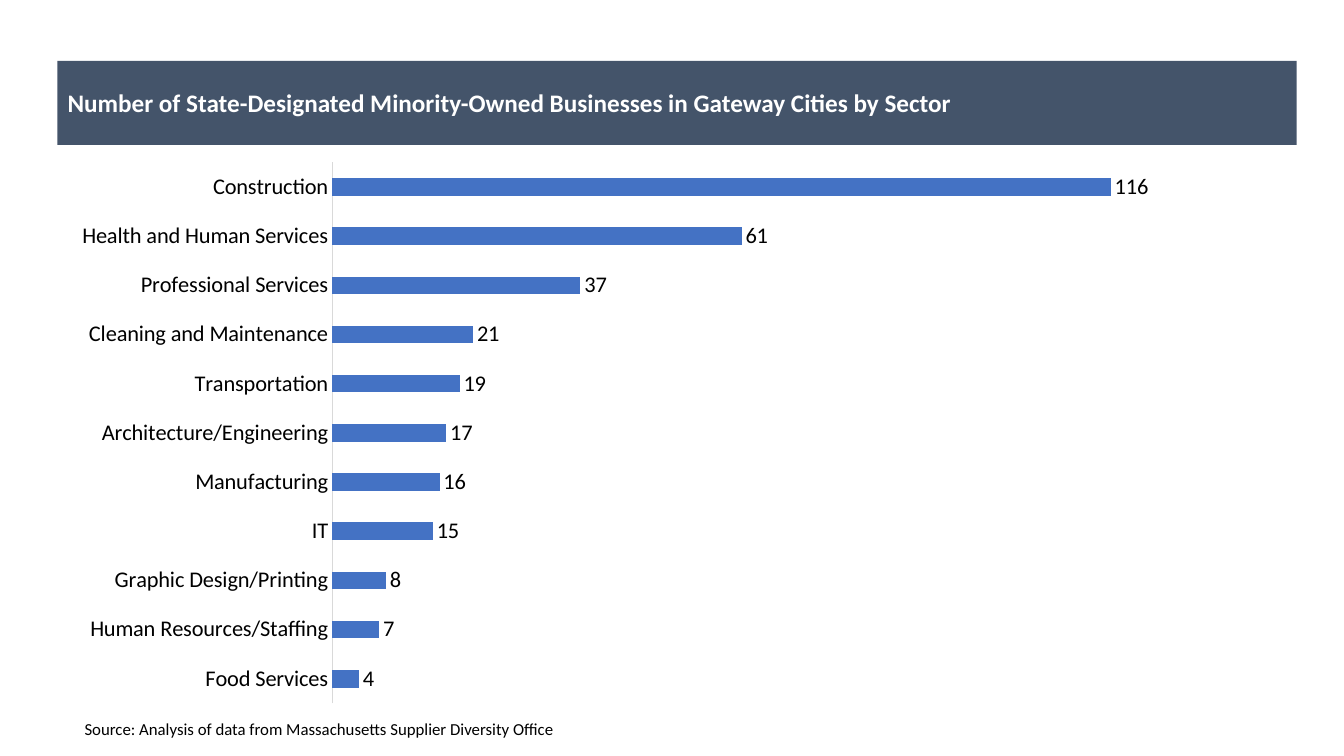
from pptx import Presentation
from pptx import util as u
from pptx.chart.data import CategoryChartData
from pptx.dml.color import RGBColor
from pptx.enum import chart as charts, text

FONT = "Calibri"
COLORS = {"banner": "44546A", "bar": "4472C4", "axis": "D9D9D9",
          "text": "000000", "light": "FFFFFF"}
WIDTH, HEIGHT = 13.33, 7.5
LEFT, BODY_WIDTH = 0.57, 12.29

SECTORS = {
    "Food Services": 4,
    "Human Resources/Staffing": 7,
    "Graphic Design/Printing": 8,
    "IT": 15,
    "Manufacturing": 16,
    "Architecture/Engineering": 17,
    "Transportation": 19,
    "Cleaning and Maintenance": 21,
    "Professional Services": 37,
    "Health and Human Services": 61,
    "Construction": 116,
}


def color(name):
    return RGBColor.from_string(COLORS[name])


def style_font(font, size, name="text", bold=False):
    font.name, font.size, font.bold = FONT, u.Pt(size), bold
    font.color.rgb = color(name)


def inches(box):
    return [u.Inches(length) for length in box]


def add_banner(page, box):
    title = page.shapes.title
    title.left, title.top, title.width, title.height = inches(box)
    title.fill.solid()
    title.fill.fore_color.rgb = color("banner")
    frame = title.text_frame
    frame.text = ("Number of State-Designated Minority-Owned Businesses "
                  "in Gateway Cities by Sector")
    frame.vertical_anchor = text.MSO_ANCHOR.MIDDLE
    frame.auto_size = text.MSO_AUTO_SIZE.SHAPE_TO_FIT_TEXT
    frame.paragraphs[0].alignment = text.PP_ALIGN.LEFT
    style_font(frame.paragraphs[0].runs[0].font, 18, "light", bold=True)


def add_sector_chart(page, box):
    data = CategoryChartData()
    data.categories = list(SECTORS)
    data.add_series("Series 1", list(SECTORS.values()))
    chart = page.shapes.add_chart(
        charts.XL_CHART_TYPE.BAR_CLUSTERED, *inches(box), data).chart
    chart.has_legend = chart.has_title = False
    style_font(chart.font, 10)

    # Axes
    sector_axis, count_axis = chart.category_axis, chart.value_axis
    sector_axis.major_tick_mark = charts.XL_TICK_MARK.NONE
    sector_axis.format.line.color.rgb = color("axis")
    sector_axis.format.line.width = u.Pt(0.75)
    style_font(sector_axis.tick_labels.font, 16)
    count_axis.minimum_scale, count_axis.maximum_scale = 0, 140
    count_axis.has_major_gridlines = False
    count_axis.visible = False

    # Bars and their values
    plot = chart.plots[0]
    plot.gap_width = 182
    plot.vary_by_categories = False
    bars = plot.series[0]
    bars.format.fill.solid()
    bars.format.fill.fore_color.rgb = color("bar")
    labels = bars.data_labels
    labels.show_value = True
    labels.position = charts.XL_LABEL_POSITION.OUTSIDE_END
    style_font(labels.font, 16)


def add_source(page, box):
    frame = page.shapes.add_textbox(*inches(box)).text_frame
    frame.word_wrap = True
    frame.text = ("Source: Analysis of data from Massachusetts "
                  "Supplier Diversity Office")
    style_font(frame.paragraphs[0].runs[0].font, 12)


def main():
    deck = Presentation()
    deck.slide_width, deck.slide_height = inches((WIDTH, HEIGHT))
    page = deck.slides.add_slide(deck.slide_layouts[5])
    add_banner(page, (LEFT, 0.82, BODY_WIDTH, 0.4))
    add_sector_chart(page, (LEFT, 1.5, BODY_WIDTH, 5.59))
    add_source(page, (0.74, 7.08, 5, 0.25))
    deck.save("out.pptx")


if __name__ == "__main__":
    main()
